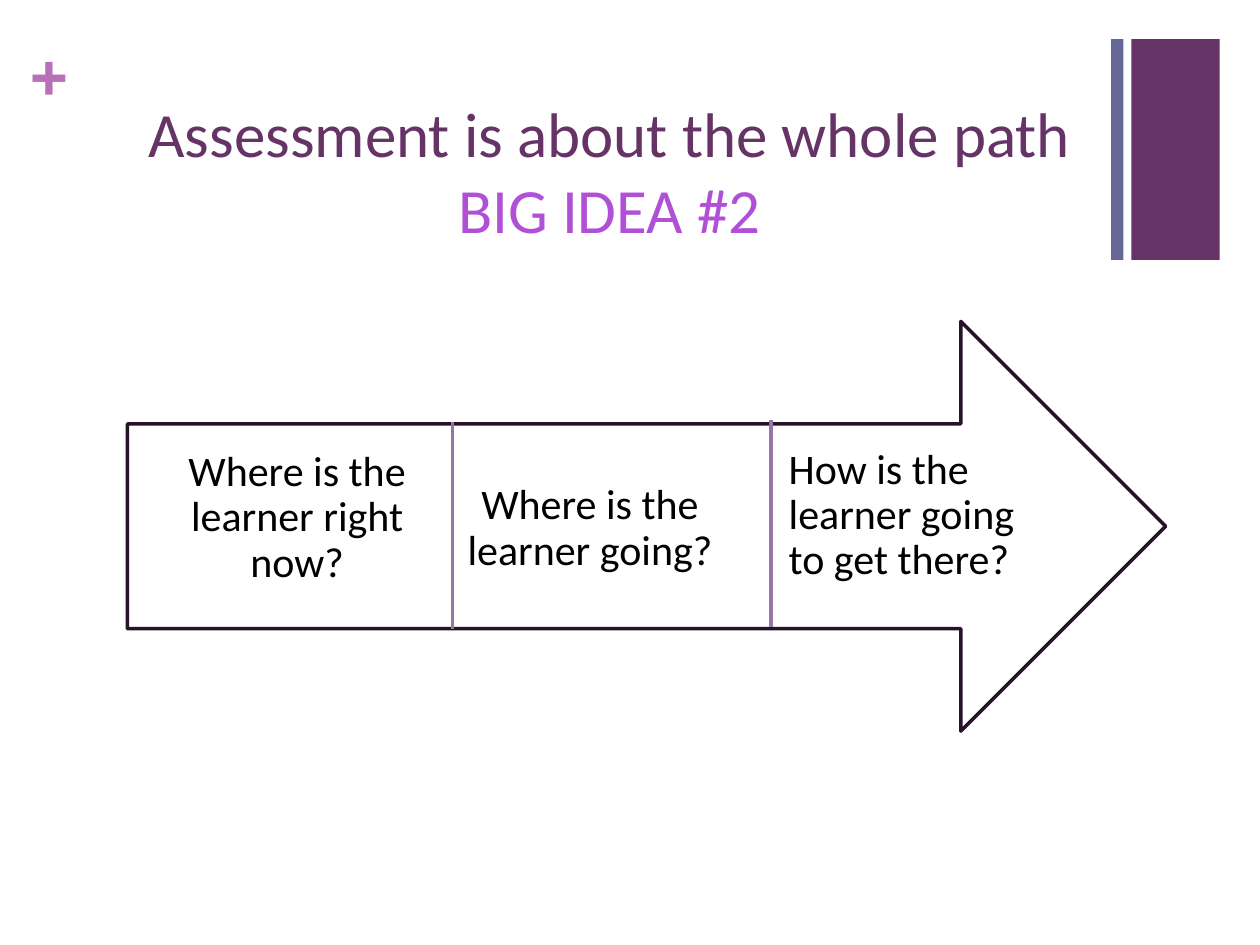
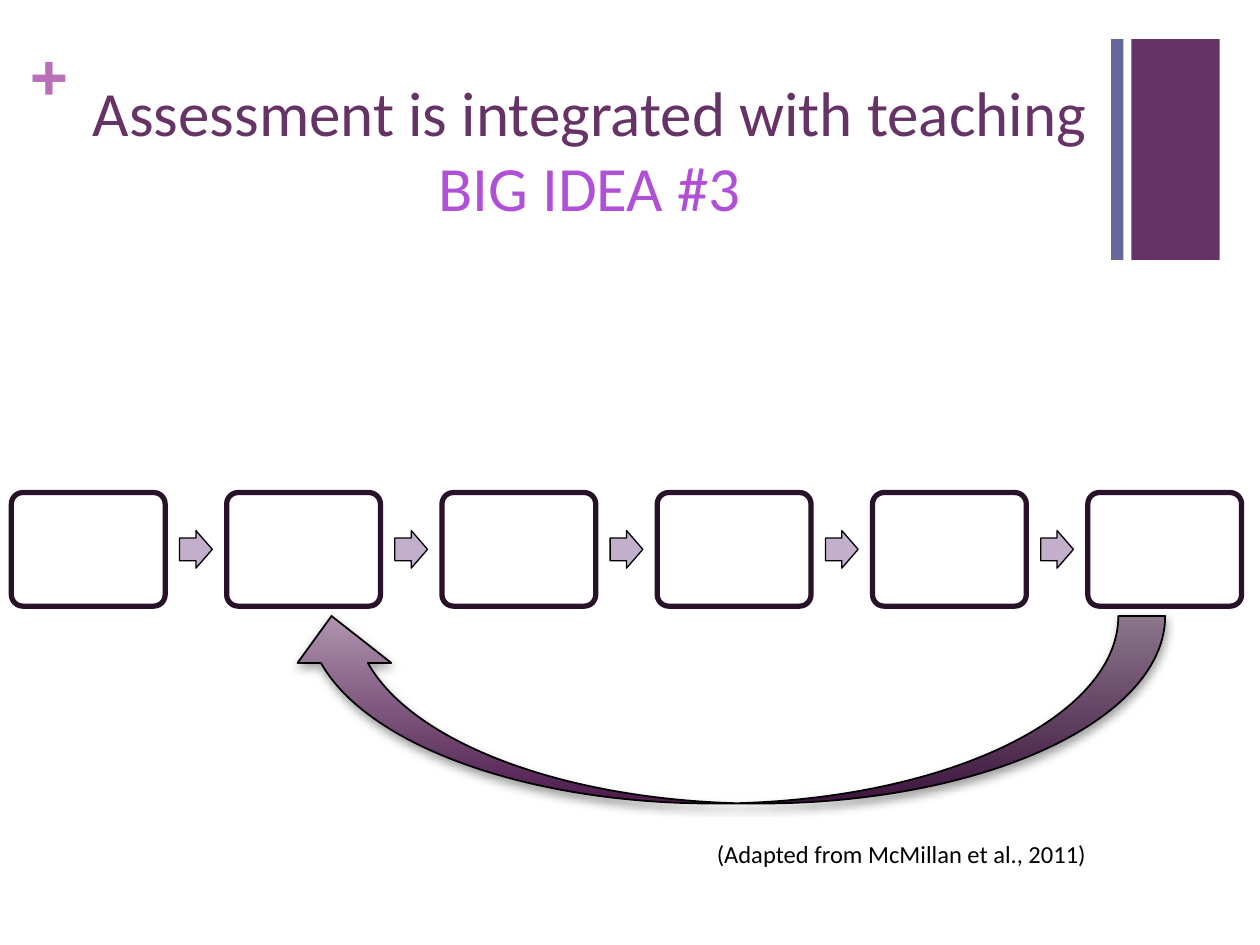
"""Build two slides on the big ideas of assessment."""
import lxml.etree
import pptx
import pptx.dml.color
import pptx.enum.shapes
import pptx.enum.text
import pptx.oxml
import pptx.oxml.ns
import pptx.util

Cm = pptx.util.Cm
Shapes = pptx.enum.shapes.MSO_SHAPE
Align = pptx.enum.text.PP_ALIGN
Anchor = pptx.enum.text.MSO_ANCHOR

COLORS = {
    "plum": "663366", "slate": "666699", "plus": "B870B8", "idea": "B050D7",
    "outline": "271229", "divider": "9875A7", "step": "C3AFCC",
    "loop_dark": "4D1A4D", "loop_light": "AF94AF", "shadow": "808080",
    "white": "FFFFFF", "black": "000000",
}


def color(name):
    """Return the named colour."""
    return pptx.dml.color.RGBColor.from_string(COLORS[name])


def add_text(slide, box, lines, size=24, font="Calibri", bold=False, align=Align.LEFT,
             anchor=Anchor.TOP, insets=(0.25, 0.13), spacing=None, wrap=True):
    """Add one paragraph made of (text, colour) lines; insets are side and top."""
    frame = slide.shapes.add_textbox(*map(Cm, box)).text_frame
    frame.word_wrap = wrap
    frame.vertical_anchor = anchor
    frame.margin_left = frame.margin_right = Cm(insets[0])
    frame.margin_top = frame.margin_bottom = Cm(insets[1])
    paragraph = frame.paragraphs[0]
    paragraph.alignment = align
    if spacing:
        paragraph.line_spacing = spacing
    for index, (text, color_name) in enumerate(lines):
        if index:
            paragraph.add_line_break()
        run = paragraph.add_run()
        run.text = text
        run.font.name = font
        run.font.size = pptx.util.Pt(size)
        run.font.bold = bold
        run.font.color.rgb = color(color_name)


def add_shape(slide, kind, box, fill, line=None, line_width=1, adjustments=()):
    """Add a preset shape with a flat fill and an optional outline."""
    shape = slide.shapes.add_shape(kind, *map(Cm, box))
    shape.shadow.inherit = False
    shape.fill.solid()
    shape.fill.fore_color.rgb = color(fill)
    if line:
        shape.line.color.rgb = color(line)
        shape.line.width = pptx.util.Pt(line_width)
    else:
        shape.line.fill.background()
    for index, value in enumerate(adjustments):
        shape.adjustments[index] = value
    return shape


def add_divider(slide, left, top, height):
    """Add a vertical line."""
    connector = slide.shapes.add_connector(
        pptx.enum.shapes.MSO_CONNECTOR.STRAIGHT, Cm(left), Cm(top), Cm(left), Cm(top + height))
    connector.line.color.rgb = color("divider")
    connector.line.width = pptx.util.Pt(2)
    lxml.etree.SubElement(connector._element.spPr, pptx.oxml.ns.qn("a:effectLst"))


def add_corner_bands(slide, box):
    """Add the narrow and wide bands at the two sides of the box."""
    left, top, width, height = box
    wide, narrow = 1.78, 0.25
    add_shape(slide, Shapes.RECTANGLE, (left + width - wide, top, wide, height), "plum")
    add_shape(slide, Shapes.RECTANGLE, (left, top, narrow, height), "slate")


def add_base_slide(presentation, title, idea, title_left, title_top):
    """Add a slide with the shared bands, plus sign and two-line title."""
    slide = presentation.slides.add_slide(presentation.slide_layouts[6])
    add_corner_bands(slide, (22.4, 0.79, 2.19, 4.45))
    add_text(slide, (0.61, 0.64, 0.74, 1.55), [("+", "plus")], size=36,
             font="TeX Gyre Bonum", bold=True, insets=(0, 0))
    add_text(slide, (title_left, title_top, 20.98, 3.1), [(title, "plum"), (idea, "idea")],
             size=36, align=Align.CENTER)
    return slide


def add_path_arrow(slide, box):
    """Add the wide arrow with its three questions and two dividers."""
    left, top, width, height = box
    add_shape(slide, Shapes.RIGHT_ARROW, box, "white", "outline", 2)
    questions = [
        ("How is the learner going to get there?", 13.33, 1.85, 5.36, 4.14, Align.LEFT),
        ("Where is the learner going?", 6.85, 2.11, 4.95, 4.14, Align.CENTER),
        ("Where is the learner right now?", 0.83, 1.85, 5.18, 4.24, Align.CENTER),
    ]
    for question, across, down, text_width, text_height, align in questions:
        add_text(slide, (left + across, top + down, text_width, text_height),
                 [(question, "black")], align=align, anchor=Anchor.MIDDLE,
                 insets=(0, 0.69), spacing=0.9)
    for across, down in ((6.55, 2.03), (12.97, 1.98)):
        add_divider(slide, left + across, top + down, height / 2 + 0.04)


def add_step_row(slide, box, count=6):
    """Add a row of equal rounded steps with an arrow centred in each gap."""
    left, top, width, height = box
    step_width, arrow_width, arrow_height = 3.1, 0.66, 0.76
    pitch = (width - step_width) / (count - 1)
    arrow_offset = (pitch + step_width - arrow_width) / 2
    for index in range(count):
        step_left = left + index * pitch
        add_shape(slide, Shapes.ROUNDED_RECTANGLE, (step_left, top, step_width, height),
                  "white", "outline", 3, [0.1])
        if index < count - 1:
            add_shape(slide, Shapes.RIGHT_ARROW,
                      (step_left + arrow_offset, top + (height - arrow_height) / 2,
                       arrow_width, arrow_height),
                      "step", "black", 0.75, [0.6, 0.5])


def add_return_loop(slide, box):
    """Add the shaded curved arrow that leads back to the second step."""
    shape = add_shape(slide, Shapes.CURVED_DOWN_ARROW, box, "plum", "black", 1)
    shape.fill.gradient()
    shape.fill.gradient_angle = 270
    for stop, name, position in zip(shape.fill.gradient_stops, ("loop_dark", "loop_light"), (0, 1)):
        stop.color.rgb = color(name)
        stop.position = position
    properties = shape._element.spPr
    for flip in ("flipH", "flipV"):
        properties.xfrm.set(flip, "1")
    effects = properties.find(pptx.oxml.ns.qn("a:effectLst"))
    effects.append(pptx.oxml.parse_xml(
        f'<a:outerShdw {pptx.oxml.ns.nsdecls("a")} blurRad="63500" dist="25400" dir="5400000" '
        f'rotWithShape="0"><a:srgbClr val="{COLORS["shadow"]}"><a:alpha val="75000"/>'
        '</a:srgbClr></a:outerShdw>'))


def main():
    """Build and save the presentation."""
    presentation = pptx.Presentation()
    presentation.slide_width, presentation.slide_height = Cm(25.4), Cm(19.05)

    slide = add_base_slide(presentation, "Assessment is about the whole path",
                           "BIG IDEA #2", 1.8, 1.78)
    add_path_arrow(slide, (2.57, 6.48, 20.93, 8.26))

    slide = add_base_slide(presentation, "Assessment is integrated with teaching",
                           "BIG IDEA #3", 1.4, 1.35)
    add_step_row(slide, (0.23, 9.93, 24.8, 2.29))
    add_return_loop(slide, (5.74, 12.42, 17.75, 3.78))
    add_text(slide, (14.2, 16.66, 8.03, 0.91),
             [("(Adapted from McMillan et al., 2011)", "black")],
             size=14, spacing=1.2, wrap=False)

    presentation.save("out.pptx")


if __name__ == "__main__":
    main()
